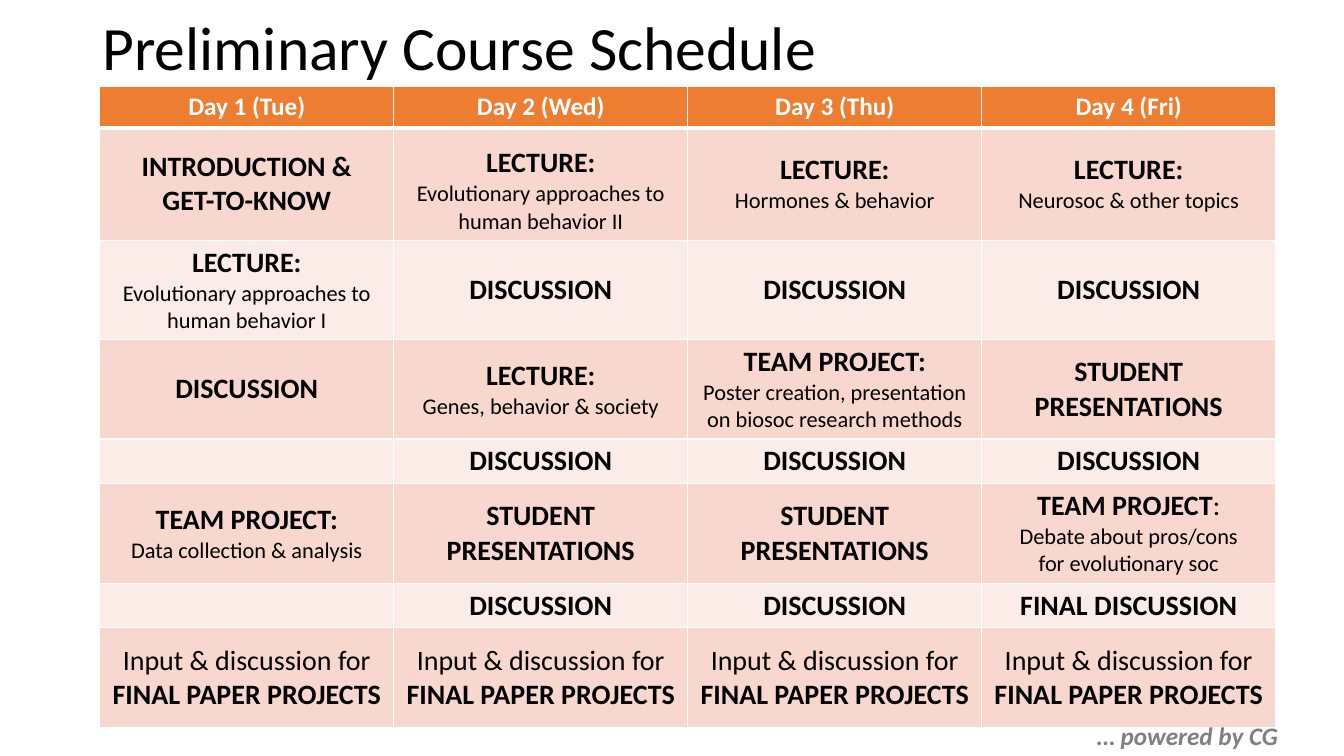
from copy import deepcopy
from lxml import etree
from pptx import Presentation
from pptx.dml.color import RGBColor
from pptx.enum.text import MSO_ANCHOR, PP_ALIGN
from pptx.oxml.ns import qn
from pptx.util import Pt

MIDDLE, TOP = MSO_ANCHOR.MIDDLE, MSO_ANCHOR.TOP
CENTER, LEFT = PP_ALIGN.CENTER, PP_ALIGN.LEFT
BLACK = RGBColor(0x00, 0x00, 0x00)
WHITE = RGBColor(0xFF, 0xFF, 0xFF)
GRAY = RGBColor(0x80, 0x80, 0x80)
ORANGE = RGBColor(0xED, 0x7D, 0x31)
PEACH = RGBColor(0xF8, 0xD7, 0xCE)
PALE = RGBColor(0xFC, 0xEC, 0xE8)
FONT = "Calibri"

DAY, BOLD, BIG, SMALL = (18, True), (20, True), (20, False), (16, False)


def topic(head, detail):
    return [(head + ":\n", BOLD), (detail, SMALL)]


TALK = [("DISCUSSION", BOLD)]
SHOW = [("STUDENT\nPRESENTATIONS", BOLD)]
PAPER = [("Input & discussion for ", BIG), ("FINAL PAPER PROJECTS", BOLD)]
DEBATE = [("TEAM PROJECT", BOLD), (":\n", BIG),
          ("Debate about pros/cons\nfor evolutionary soc", SMALL)]
TITLE = "Preliminary Course Schedule"
CREDIT = "… powered by CG"
DAYS = ["Day 1 (Tue)", "Day 2 (Wed)", "Day 3 (Thu)", "Day 4 (Fri)"]
PLAN = [
    (29, [[(day, DAY)] for day in DAYS]),
    (80, [[("INTRODUCTION &\nGET-TO-KNOW", BOLD)],
          topic("LECTURE", "Evolutionary approaches to human behavior II"),
          topic("LECTURE", "Hormones & behavior"),
          topic("LECTURE", "Neurosoc & other topics")]),
    (71, [topic("LECTURE", "Evolutionary approaches to human behavior I"),
          TALK, TALK, TALK]),
    (71, [TALK, topic("LECTURE", "Genes, behavior & society"),
          topic("TEAM PROJECT",
                "Poster creation, presentation on biosoc research methods"),
          SHOW]),
    (32, [[], TALK, TALK, TALK]),
    (71, [topic("TEAM PROJECT", "Data collection & analysis"),
          SHOW, SHOW, DEBATE]),
    (32, [[], TALK, TALK, [("FINAL DISCUSSION", BOLD)]]),
    (71, [PAPER] * 4),
]
WIDTH = 210


def style(run, size, bold, color):
    font = run.font
    font.name, font.size, font.bold = FONT, Pt(size), bold
    font.color.rgb = color


def write(para, parts, color):
    para.alignment = CENTER
    for text, (size, bold) in parts:
        for i, line in enumerate(text.split("\n")):
            if i:
                para.add_line_break()
            if line:
                run = para.add_run()
                run.text = line
                style(run, size, bold, color)
    for gap in para._p.findall(qn("a:br")):
        gap.append(deepcopy(gap.getprevious().find(qn("a:rPr"))))


def border(cell, row):
    props = cell._tc.get_or_add_tcPr()
    sides = {"L": 1, "R": 1, "T": 3 if row == 1 else 1, "B": 3 if row == 0 else 1}
    for i, (side, width) in enumerate(sides.items()):
        line = etree.Element(qn("a:ln" + side), w=str(Pt(width)))
        fill = etree.SubElement(line, qn("a:solidFill"))
        etree.SubElement(fill, qn("a:srgbClr"), val=str(WHITE))
        props.insert(i, line)


def main():
    deck = Presentation()
    deck.slide_width, deck.slide_height = Pt(960), Pt(540)
    slide = deck.slides.add_slide(deck.slide_layouts[5])

    title = slide.shapes.title
    title.left, title.top, title.width, title.height = Pt(66), Pt(-16), Pt(828), Pt(104.4)
    title.text_frame.text = TITLE
    title.text_frame.vertical_anchor = MIDDLE
    para = title.text_frame.paragraphs[0]
    para.alignment, para.line_spacing = LEFT, 0.9
    style(para.runs[0], 44, False, BLACK)

    high = sum(height for height, _ in PLAN)
    table = slide.shapes.add_table(len(PLAN), len(DAYS), Pt(71.3), Pt(62),
                                   Pt(WIDTH * len(DAYS)), Pt(high)).table
    for col in table.columns:
        col.width = Pt(WIDTH)
    for r, (height, cells) in enumerate(PLAN):
        table.rows[r].height = Pt(height)
        for c, parts in enumerate(cells):
            cell = table.cell(r, c)
            cell.vertical_anchor = MIDDLE if r else TOP
            cell.fill.solid()
            cell.fill.fore_color.rgb = (PEACH if r % 2 else PALE) if r else ORANGE
            border(cell, r)
            write(cell.text_frame.paragraphs[0], parts, BLACK if r else WHITE)
    table.cell(1, 1).margin_top = Pt(13.2)

    note = slide.shapes.add_textbox(Pt(776.5), Pt(511.2), Pt(145.4), Pt(29))
    note.text_frame.text = CREDIT
    run = note.text_frame.paragraphs[0].runs[0]
    style(run, 18, True, GRAY)
    run.font.italic = True

    deck.save("out.pptx")


if __name__ == "__main__":
    main()
